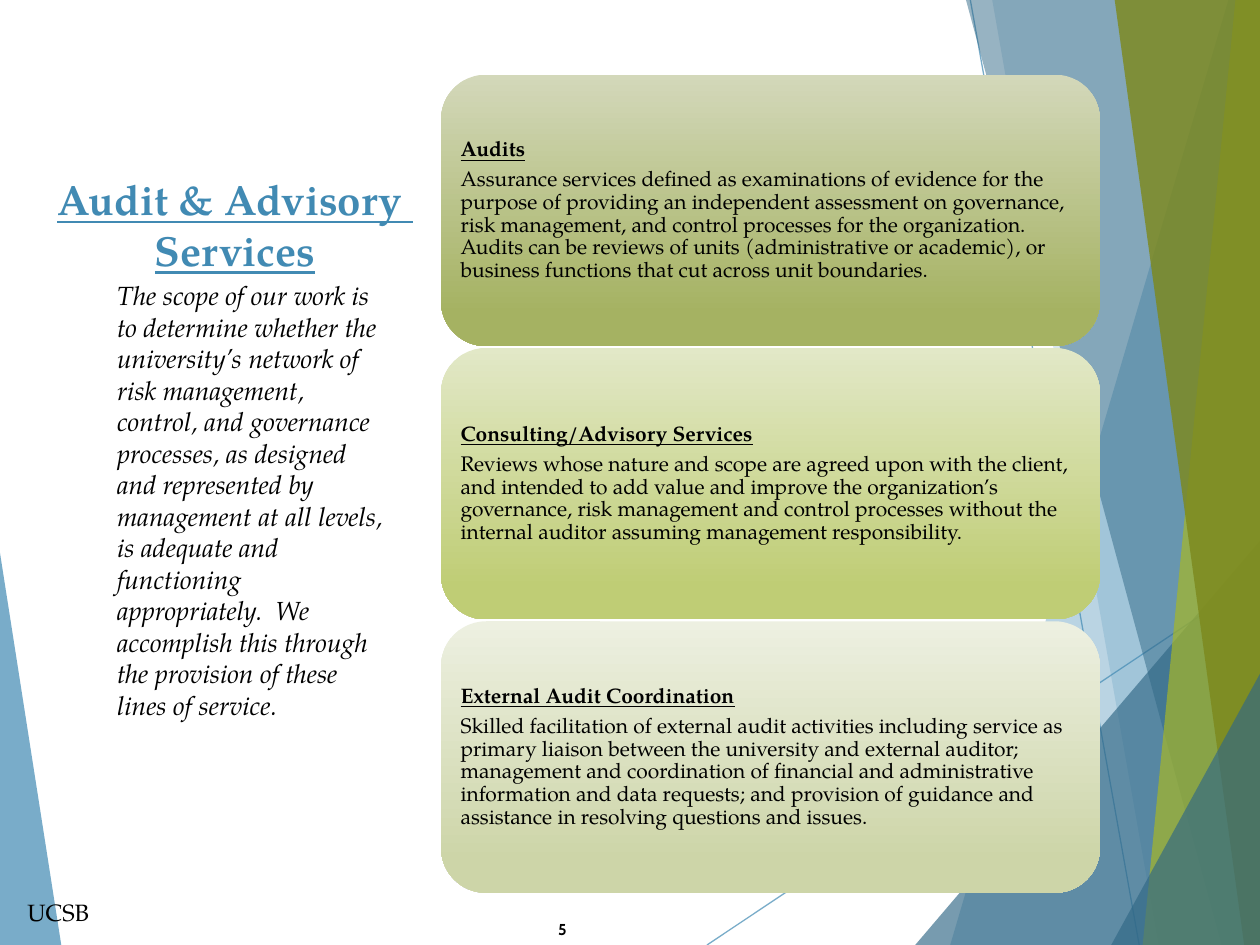
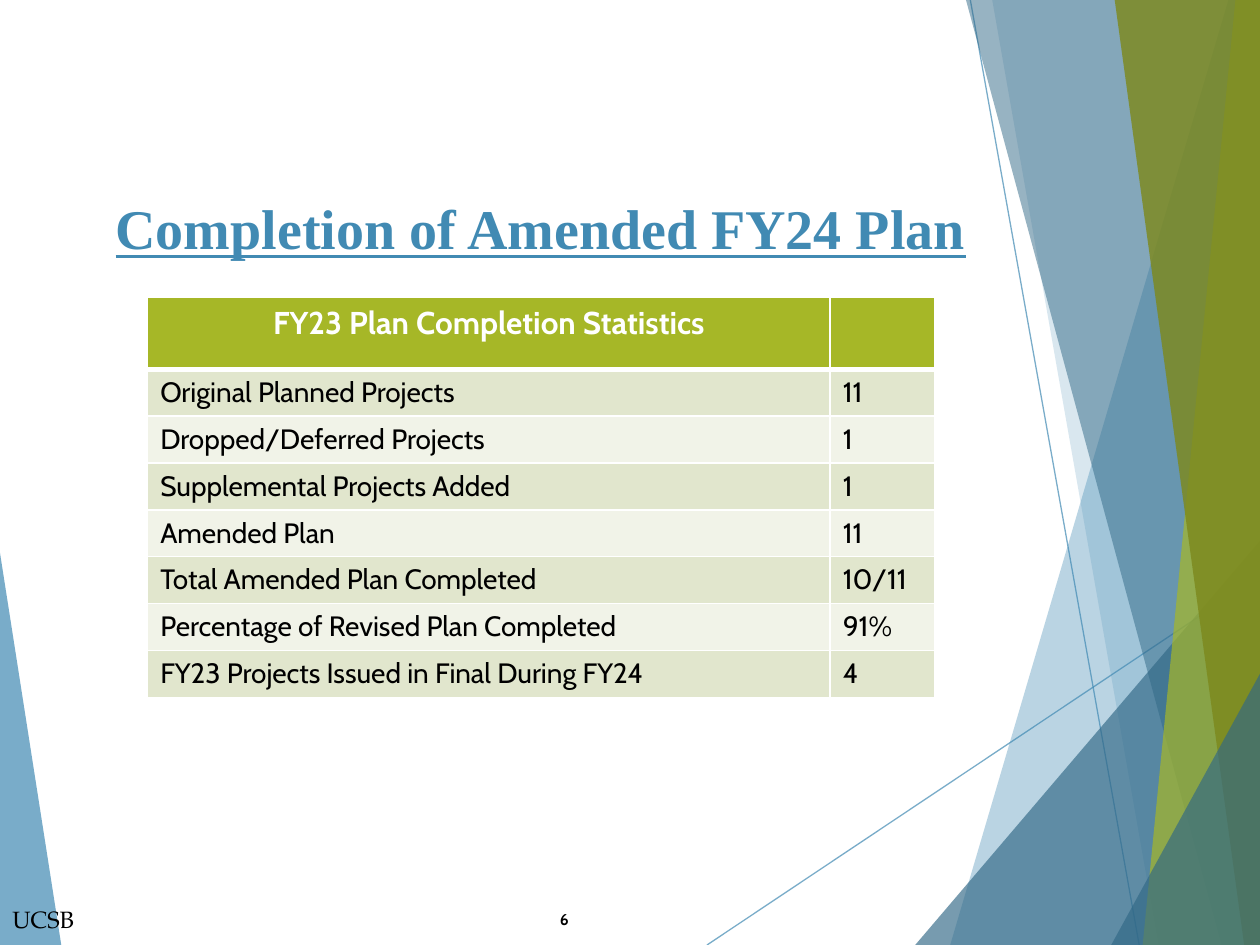
"""Builds two audit slides: lines of service and plan completion."""
from lxml import etree
from pptx import Presentation
from pptx import util as u
from pptx.dml.color import RGBColor
from pptx.enum import shapes, text
from pptx.oxml.ns import qn

Pt = u.Pt
W, H = 720, 540
C = {"blue": "418AB3", "navy": "316886", "lime": "A6B727", "olive": "7D891D",
     "black": "000000", "white": "FFFFFF", "band": "E1E6CD", "pale": "F1F3E8"}
SERIF = "TeX Gyre Pagella"
SANS = "Cabin"
LEFT, CENTER = text.PP_ALIGN.LEFT, text.PP_ALIGN.CENTER
RIGHT, JUSTIFY = text.PP_ALIGN.RIGHT, text.PP_ALIGN.JUSTIFY
TOP, MIDDLE = text.MSO_ANCHOR.TOP, text.MSO_ANCHOR.MIDDLE

TITLE = {"bold": True, "underline": True, "color": "blue"}
BODY = {"name": SERIF, "size": 12}
HEADING = {**BODY, "bold": True, "underline": True}
NUMBER = {"name": SANS, "size": 9, "bold": True}

# top x, top y, bottom x, slide edge, colour, opacity
SLIVER = (0, 316, 35, 0, "blue", 70)
BLADES = [
    (702, 0, 543, W, "blue", 36),
    (567, 0, 662, W, "blue", 20),
    (W, 309, 523, W, "navy", 66),
    (552, 0, 698, W, "navy", 50),
    (706, 0, 653, W, "lime", 70),
    (637, 0, 711, W, "olive", 82),
    (W, 385, 635, W, "navy", 66),
]
RAYS = [(404, H, W, 329), (554.5, 0, 651, H)]

SCOPE = ("The scope of our work is to determine whether the university’s network of "
         "risk management, control, and governance processes, as designed and "
         "represented by management at all levels, is adequate and functioning "
         "appropriately.  We accomplish this through the provision of these lines "
         "of service.")
SERVICES = [
    ("Audits",
     "Assurance services defined as examinations of evidence for the purpose of "
     "providing an independent assessment on governance, risk management, and control "
     "processes for the organization. Audits can be reviews of units (administrative "
     "or academic), or business functions that cut across unit boundaries.",
     "D3D8BA", "A5B262"),
    ("Consulting/Advisory Services",
     "Reviews whose nature and scope are agreed upon with the client, and intended to "
     "add value and improve the organization’s governance, risk management and control "
     "processes without the internal auditor assuming management responsibility.",
     "E2E8C7", "BFCD75"),
    ("External Audit Coordination",
     "Skilled facilitation of external audit activities including service as primary "
     "liaison between the university and external auditor; management and coordination "
     "of financial and administrative information and data requests; and provision of "
     "guidance and assistance in resolving questions and issues.",
     "EDF0E1", "CDD5A8"),
]
STATISTICS = [
    ("FY23 Plan Completion Statistics", ""),
    ("Original Planned Projects", "11"),
    ("Dropped/Deferred Projects", "1"),
    ("Supplemental Projects Added", "1"),
    ("Amended Plan", "11"),
    ("Total Amended Plan Completed", "10/11"),
    ("Percentage of Revised Plan Completed", "91%"),
    ("FY23 Projects Issued in Final During FY24", "4"),
]


def rgb(key):
    return RGBColor.from_string(C.get(key, key))


def set_alpha(fill, percent):
    color = fill._xPr.find(".//" + qn("a:srgbClr"))
    etree.SubElement(color, qn("a:alpha")).set("val", str(percent * 1000))


def write(p, words, fmt, align=LEFT):
    p.alignment = align
    r = p.add_run()
    r.text = words
    f = {"color": "black", **fmt}
    r.font.color.rgb = rgb(f.pop("color"))
    f["size"] = Pt(f["size"])
    for key, value in f.items():
        setattr(r.font, key, value)


def add_text(s, box, parts, align=LEFT, anchor=TOP, wrap=True, inset=None, **spacing):
    tf = s.shapes.add_textbox(*map(Pt, box)).text_frame
    tf.word_wrap, tf.vertical_anchor = wrap, anchor
    if inset is not None:
        for side in ("left", "top", "right", "bottom"):
            setattr(tf, "margin_" + side, Pt(inset))
    for i, (words, fmt) in enumerate(parts):
        p = tf.add_paragraph() if i else tf.paragraphs[0]
        write(p, words, fmt, align)
        for key, value in spacing.items():
            setattr(p, key, value)


def add_blade(s, top_x, top_y, bottom_x, edge, color, opacity):
    b = s.shapes.build_freeform(Pt(top_x), Pt(top_y))
    outline = [(bottom_x, H), (edge, H), (edge, top_y)]
    b.add_line_segments([(Pt(x), Pt(y)) for x, y in outline])
    sp = b.convert_to_shape()
    sp.shadow.inherit = False
    sp.fill.solid()
    sp.fill.fore_color.rgb = rgb(color)
    set_alpha(sp.fill, opacity)
    sp.line.fill.background()


def add_ray(s, *ends):
    line = s.shapes.add_connector(shapes.MSO_CONNECTOR.STRAIGHT, *map(Pt, ends))
    line.line.width = Pt(0.75)
    line.line.color.rgb = rgb("blue")
    set_alpha(line.line.fill, 70)
    etree.SubElement(line._element.spPr, qn("a:effectLst"))


def add_base(prs, title, title_box, title_font, tag_at):
    s = prs.slides.add_slide(prs.slide_layouts[6])
    add_blade(s, *SLIVER)
    for ray in RAYS:
        add_ray(s, *ray)
    for blade in BLADES:
        add_blade(s, *blade)
    add_text(s, title_box, [(title, {**TITLE, **title_font})], CENTER)
    add_text(s, (*tag_at, 50.4, 23.8), [("UCSB", {"name": SERIF, "size": 13.5})], wrap=False)
    return s


def add_service(s, i, heading, body, light, dark):
    x, y, w, h, pad = 252, 42.6 + i * 156.2, 376.6, 155.2, 7.6
    sp = s.shapes.add_shape(shapes.MSO_SHAPE.ROUNDED_RECTANGLE, *map(Pt, (x, y, w, h)))
    sp.shadow.inherit = False
    sp.line.fill.background()
    sp.fill.gradient()
    sp.fill.gradient_angle = 270
    for stop, color, position in zip(sp.fill.gradient_stops, (light, dark), (0, 0.88)):
        stop.color.rgb, stop.position = rgb(color), position
    add_text(s, (x + pad, y + pad, w - 2 * pad, h - 2 * pad),
             [(heading, HEADING), (body, BODY)], anchor=MIDDLE, inset=3.6,
             line_spacing=0.9, space_after=Pt(4.2))


def set_borders(cell, bottom):
    tc = cell._tc.get_or_add_tcPr()
    for i, (side, width) in enumerate((("L", 1), ("R", 1), ("T", 1), ("B", bottom))):
        ln = etree.Element(qn("a:ln" + side), w=str(Pt(width)))
        fill = etree.SubElement(ln, qn("a:solidFill"))
        etree.SubElement(fill, qn("a:srgbClr")).set("val", C["white"])
        tc.insert(i, ln)


def add_statistics(s, x, y):
    widths, heights = (390, 60), (41,) + (26.8,) * (len(STATISTICS) - 1)
    table = s.shapes.add_table(len(heights), len(widths), Pt(x), Pt(y),
                               Pt(sum(widths)), Pt(sum(heights))).table
    table.first_row = table.horz_banding = False
    for col, width in zip(table.columns, widths):
        col.width = Pt(width)
    for i, (row, values) in enumerate(zip(table.rows, STATISTICS)):
        row.height = Pt(heights[i])
        fmt = {"name": SANS, "size": 16}
        aligns, fill = (LEFT, JUSTIFY), "band" if i % 2 else "pale"
        if i == 0:
            fmt.update(size=18, bold=True, color="white")
            aligns, fill = (CENTER, CENTER), "lime"
        for cell, value, align in zip(row.cells, values, aligns):
            cell.fill.solid()
            cell.fill.fore_color.rgb = rgb(fill)
            set_borders(cell, 1 if i else 3)
            if value:
                write(cell.text_frame.paragraphs[0], value, fmt, align)


def main():
    prs = Presentation()
    prs.slide_width, prs.slide_height = Pt(W), Pt(H)

    s = add_base(prs, "Audit & Advisory  Services", (23, 95.8, 222.5, 67.7),
                 {"name": SERIF, "size": 24}, (8.6, 509.8))
    for i, service in enumerate(SERVICES):
        add_service(s, i, *service)
    add_text(s, (59.8, 156.2, 166.3, 262), [(SCOPE, {"name": SERIF, "size": 15, "italic": True})])
    add_text(s, (311.8, 522, 18, 18), [("5", NUMBER)])

    s = add_base(prs, "Completion of Amended FY24 Plan", (-15, 107.3, 648, 90),
                 {"name": "Times New Roman", "size": 32}, (0, 513.4))
    add_statistics(s, 84.4, 170)
    add_text(s, (298, 512, 34, 27), [("6", NUMBER)], RIGHT, MIDDLE)

    prs.save("out.pptx")


if __name__ == "__main__":
    main()
